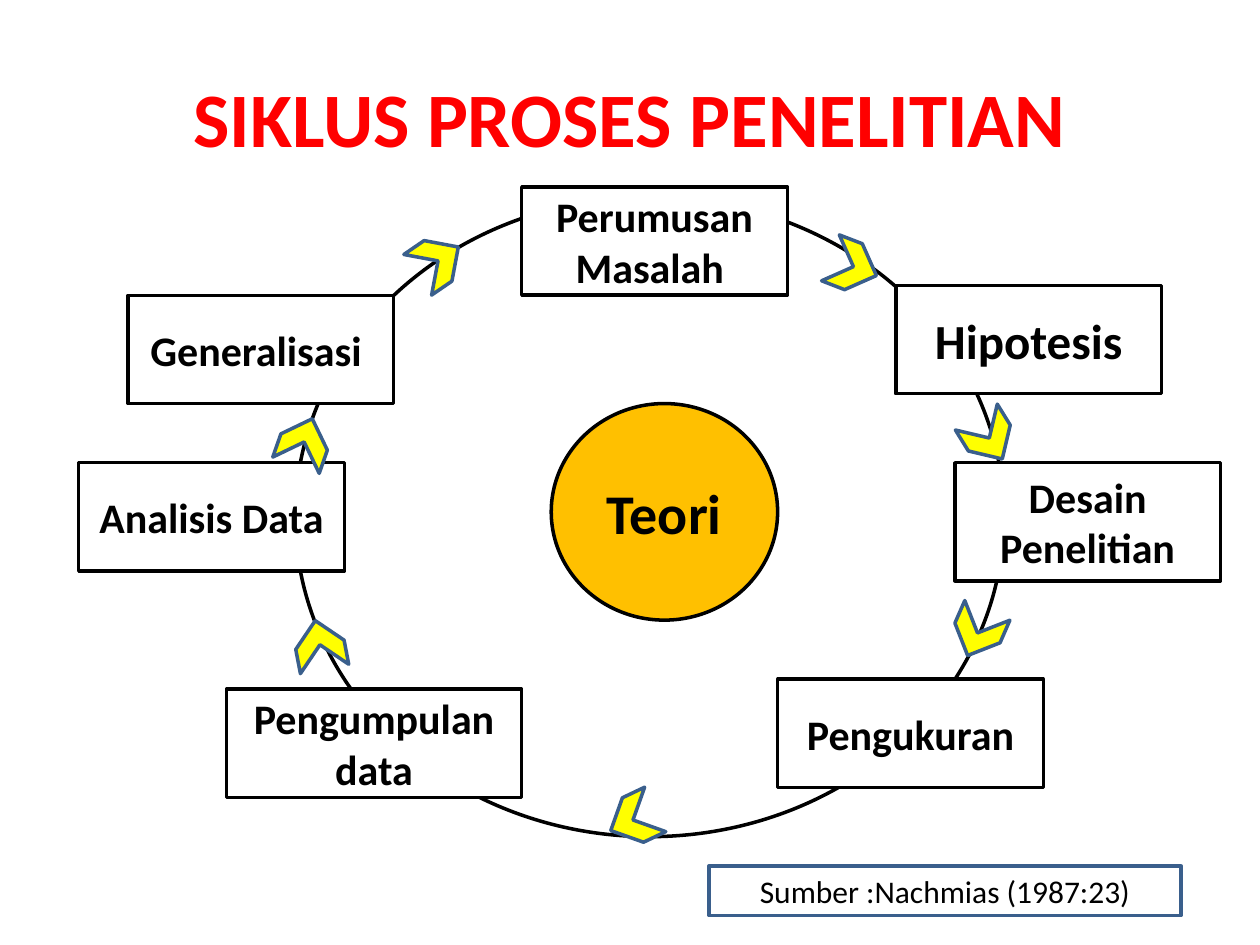
from pptx import Presentation
from pptx.dml.color import RGBColor
from pptx.enum.shapes import MSO_SHAPE
from pptx.enum.text import MSO_ANCHOR, PP_ALIGN
from pptx.util import Inches, Pt

RECTANGLE = MSO_SHAPE.RECTANGLE
OVAL = MSO_SHAPE.OVAL
CHEVRON = MSO_SHAPE.CHEVRON
CENTER = PP_ALIGN.CENTER
MIDDLE = MSO_ANCHOR.MIDDLE

COLORS = {
    "title": "FF0000",
    "text": "000000",
    "paper": "FFFFFF",
    "theory": "FFC000",
    "arrow": "FFFF00",
    "accent": "3A5F8C",
}
FONT = "Calibri"
WIDTH, HEIGHT = Inches(10), Inches(7.5)
COLUMNS = 128
CELL = WIDTH / COLUMNS
STAGE_SIZE = (27, 11)
ARROW_SIZE = (5, 5)

STAGES = [
    ("Perumusan Masalah ", (53, 19), {}),
    ("Hipotesis", (91, 29), {"font_size": 28}),
    ("Generalisasi ", (13, 30), {}),
    ("Analisis Data", (8, 47), {}),
    ("Desain Penelitian", (97, 47), {"size": (27, 12)}),
    ("Pengukuran", (79, 69), {}),
    ("Pengumpulan data", (23, 70), {"size": (30, 11)}),
]
ARROWS = [
    ((42, 24), 325.6),
    ((84.2, 24.6), 21.1),
    ((98, 42), 58.3),
    ((96.8, 61.8), 113.6),
    ((61.8, 80.8), 154.6),
    ((30, 63), 259.1),
    ((28.4, 42.4), 289.3),
]


def rgb(name):
    return RGBColor.from_string(COLORS[name])


def write_text(shape, text, font_size=24, color="text", bold=True):
    frame = shape.text_frame
    frame.word_wrap = True
    frame.vertical_anchor = MIDDLE
    paragraph = frame.paragraphs[0]
    paragraph.alignment = CENTER
    run = paragraph.add_run()
    run.text = text
    run.font.name = FONT
    run.font.size = Pt(font_size)
    run.font.bold = bold
    run.font.color.rgb = rgb(color)


def add_figure(slide, kind, position, size, fill="paper", line="text"):
    box = [round(CELL * cells) for cells in (*position, *size)]
    shape = slide.shapes.add_shape(kind, *box)
    shape.shadow.inherit = False
    shape.fill.solid()
    shape.fill.fore_color.rgb = rgb(fill)
    shape.line.color.rgb = rgb(line)
    shape.line.width = Pt(2)
    return shape


def add_title(slide, text):
    title = slide.shapes.title
    title.left, title.top = round(WIDTH * 0.05), round(HEIGHT * 0.04)
    title.width, title.height = round(WIDTH * 0.9), Inches(1.25)
    write_text(title, text, font_size=44, color="title")


def add_stage(slide, text, position, size=STAGE_SIZE, font_size=24):
    stage = add_figure(slide, RECTANGLE, position, size)
    write_text(stage, text, font_size=font_size)


def add_arrow(slide, position, rotation):
    arrow = add_figure(slide, CHEVRON, position, ARROW_SIZE, fill="arrow", line="accent")
    arrow.rotation = rotation


def main():
    presentation = Presentation()
    presentation.slide_width, presentation.slide_height = WIDTH, HEIGHT
    slide = presentation.slides.add_slide(presentation.slide_layouts[5])
    add_title(slide, "SIKLUS PROSES PENELITIAN")
    add_figure(slide, OVAL, (30, 20), (72, 65))
    theory = add_figure(slide, OVAL, (56, 41), (23, 22), fill="theory")
    write_text(theory, "Teori", font_size=32)
    for text, position, options in STAGES:
        add_stage(slide, text, position, **options)
    source = add_figure(slide, RECTANGLE, (72, 88), (48, 5), line="accent")
    write_text(source, "Sumber :Nachmias (1987:23)", font_size=18, bold=False)
    for position, rotation in ARROWS:
        add_arrow(slide, position, rotation)
    presentation.save("out.pptx")


if __name__ == "__main__":
    main()
